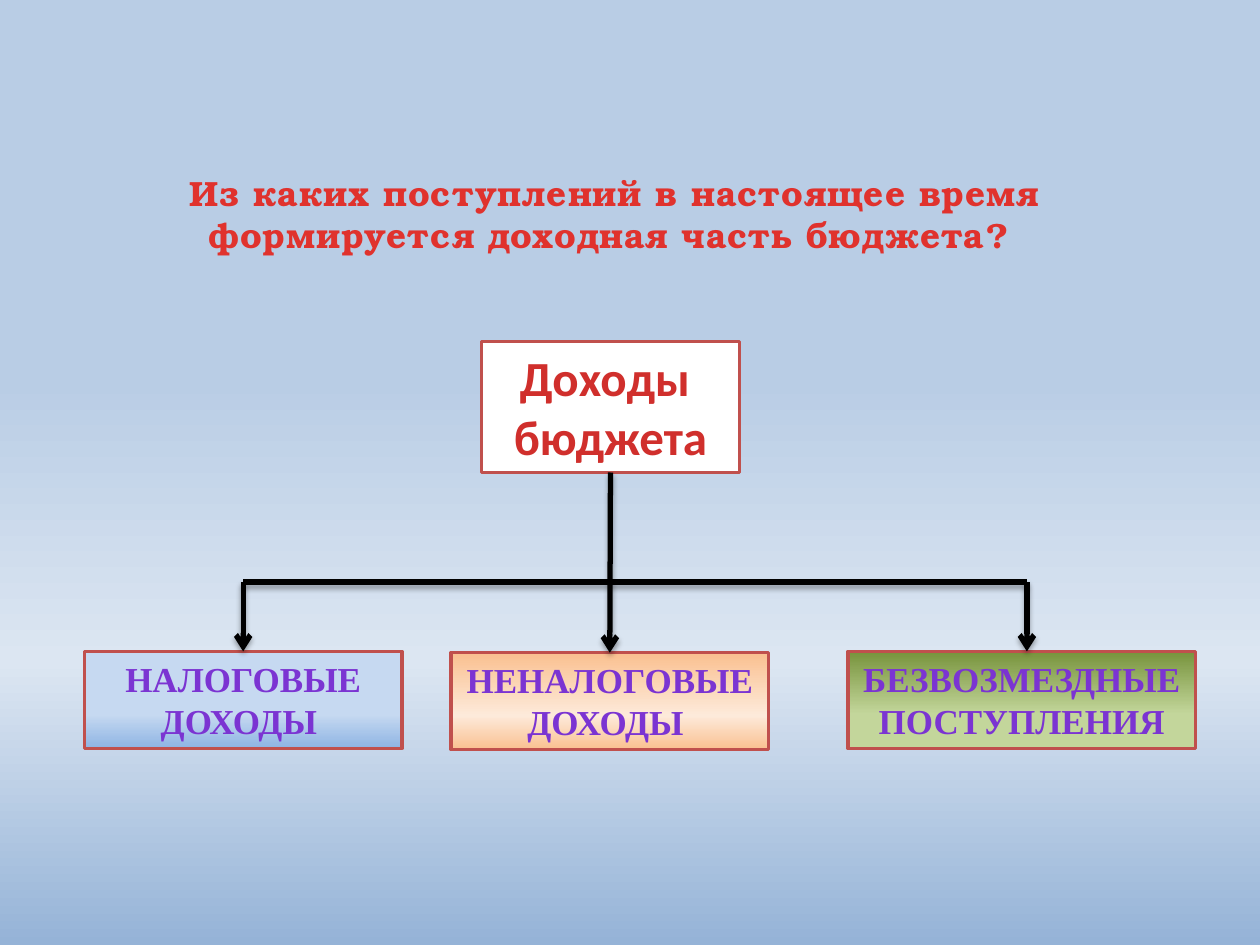
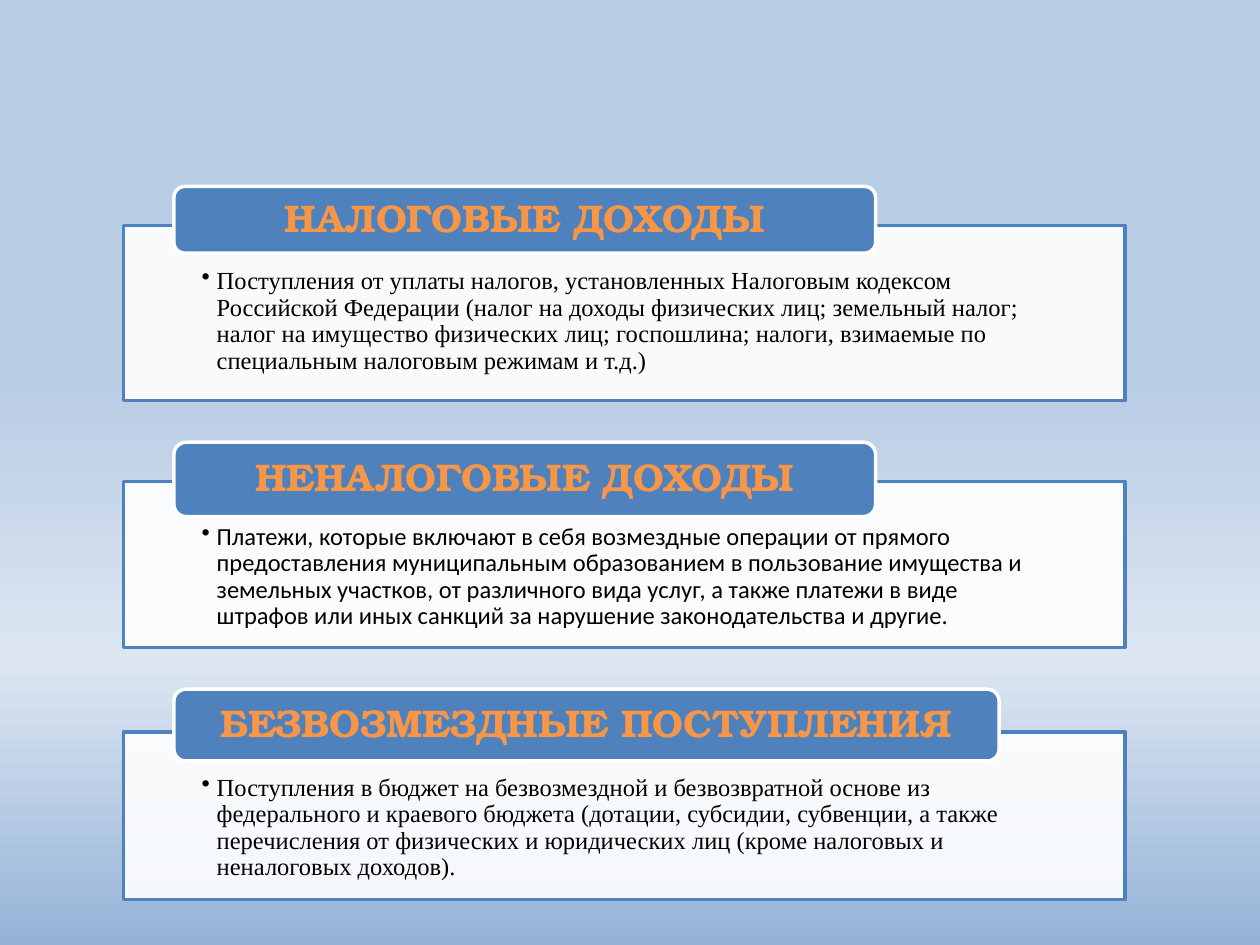
"""Build two slides on the sources of budget revenue."""
from dataclasses import dataclass
from typing import Any, NamedTuple, Optional, Union

import lxml.etree
import pptx
import pptx.dml.color
import pptx.enum.shapes
import pptx.enum.text
import pptx.oxml.ns
import pptx.util

Inches = pptx.util.Inches
Pt = pptx.util.Pt
RGBColor = pptx.dml.color.RGBColor
Shapes = pptx.enum.shapes.MSO_SHAPE
Anchor = pptx.enum.text.MSO_ANCHOR
Align = pptx.enum.text.PP_ALIGN
qualified = pptx.oxml.ns.qn

BLACK = RGBColor(0x00, 0x00, 0x00)
WHITE = RGBColor(0xFF, 0xFF, 0xFF)
BLUE = RGBColor(0x4F, 0x81, 0xBD)
ORANGE = RGBColor(0xF7, 0x96, 0x46)
BRICK = RGBColor(0xC0, 0x50, 0x4D)
SKY = RGBColor(0xB9, 0xCD, 0xE5)
MIST = RGBColor(0xDC, 0xE6, 0xF2)
DUSK = RGBColor(0x95, 0xB3, 0xD7)
RED = RGBColor(0xE0, 0x32, 0x2D)
DARK_RED = RGBColor(0xA2, 0x20, 0x1C)
PINK = RGBColor(0xFC, 0x7C, 0x7A)
CRIMSON = RGBColor(0xD0, 0x2F, 0x2C)
SCARLET = RGBColor(0xC7, 0x05, 0x00)
DEEP_VIOLET = RGBColor(0x3D, 0x1B, 0x67)
BRIGHT_VIOLET = RGBColor(0x7B, 0x34, 0xD2)
VIOLET = RGBColor(0x73, 0x30, 0xC4)
VIOLET_OUTLINE = RGBColor(0x5E, 0x45, 0x7C)
MEDIUM_BLUE = RGBColor(0x8E, 0xB4, 0xE3)
PALE_BLUE = RGBColor(0xC6, 0xD9, 0xF1)
PEACH = RGBColor(0xFA, 0xC0, 0x90)
CREAM = RGBColor(0xFD, 0xEA, 0xDA)
LIGHT_GREEN = RGBColor(0xC3, 0xD6, 0x9B)
GREEN = RGBColor(0x77, 0x93, 0x3C)

SERIF = "TeX Gyre Bonum"
ROMAN = "Times New Roman"
SANS = "Calibri"


class Gradient(NamedTuple):
    """Colour stops in percent and a counter-clockwise angle."""
    stops: tuple[tuple[int, RGBColor], ...]
    angle: int = 270


Paint = Union[RGBColor, Gradient]


class TextStyle(NamedTuple):
    """Look of the characters in a text."""
    font: str
    size: int
    paint: Paint
    bold: bool = True
    outline: Optional[RGBColor] = None
    spacing: float = 0


class Place(NamedTuple):
    """Left, top, width and height in inches."""
    left: float
    top: float
    width: float
    height: float

    def lengths(self) -> list[int]:
        """Return the four values as lengths."""
        return [Inches(value) for value in self]


@dataclass
class Source:
    """A kind of revenue in the tree."""
    text: str
    place: Place
    paint: Gradient
    arrow_x: float
    joined: bool = True


@dataclass
class Section:
    """A heading tab over a framed explanation."""
    heading: str
    text: str
    font: str
    tab: Place
    top: float
    height: float


BACKDROP = Gradient(((0, SKY), (40, SKY), (70, MIST), (100, DUSK)))
TITLE_STYLE = TextStyle(SERIF, 20, Gradient(((25, RED), (100, DARK_RED))), spacing=0.5)
ROOT_STYLE = TextStyle(SANS, 28, Gradient(((0, PINK), (75, CRIMSON), (100, SCARLET))))
SOURCE_STYLE = TextStyle(
    ROMAN, 20,
    Gradient(((0, DEEP_VIOLET), (43, BRIGHT_VIOLET), (48, VIOLET), (100, DEEP_VIOLET))),
    outline=VIOLET_OUTLINE)
HEADING_STYLE = TextStyle(SERIF, 22, ORANGE)

BRANCH_Y = 4.62
SOURCES = [
    Source("НАЛОГОВЫЕ ДОХОДЫ ", Place(0.67, 5.17, 2.52, 0.77),
           Gradient(((0, MEDIUM_BLUE), (35, PALE_BLUE), (100, PALE_BLUE)), 90), 1.93),
    Source("НЕНАЛОГОВЫЕ ДОХОДЫ ", Place(3.58, 5.18, 2.52, 0.77),
           Gradient(((0, PEACH), (35, CREAM), (100, PEACH)), 90), 4.84),
    Source("БЕЗВОЗМЕЗДНЫЕ ПОСТУПЛЕНИЯ", Place(6.73, 5.17, 2.76, 0.77),
           Gradient(((0, LIGHT_GREEN), (35, LIGHT_GREEN), (100, GREEN)), 90), 8.15, False),
]
SECTIONS = [
    Section("НАЛОГОВЫЕ ДОХОДЫ",
            "Поступления от уплаты налогов, установленных Налоговым кодексом Российской "
            "Федерации (налог на доходы физических лиц; земельный налог; налог на имущество "
            "физических лиц; госпошлина; налоги, взимаемые по специальным налоговым режимам "
            "и т.д.)",
            ROMAN, Place(1.38, 1.48, 5.57, 0.53), 1.79, 1.39),
    Section("НЕНАЛОГОВЫЕ ДОХОДЫ",
            "Платежи, которые включают в себя возмездные операции от прямого предоставления "
            "муниципальным образованием в пользование имущества и земельных участков, от "
            "различного вида услуг, а также платежи в виде штрафов или иных санкций за "
            "нарушение законодательства и другие.",
            SANS, Place(1.38, 3.51, 5.57, 0.59), 3.82, 1.32),
    Section("БЕЗВОЗМЕЗДНЫЕ ПОСТУПЛЕНИЯ",
            "Поступления в бюджет на безвозмездной и безвозвратной основе из федерального и "
            "краевого бюджета (дотации, субсидии, субвенции, а также перечисления от "
            "физических и юридических лиц (кроме налоговых и неналоговых доходов).",
            ROMAN, Place(1.38, 5.47, 6.55, 0.57), 5.81, 1.33),
]


def add_element(parent: Any, tag: str, **attributes: Any) -> Any:
    """Append a drawing element with attributes."""
    values = {name: str(value) for name, value in attributes.items()}
    return lxml.etree.SubElement(parent, qualified(tag), values)


def apply_paint(fill: Any, owner: Any, paint: Paint) -> None:
    """Fill with a plain colour or a gradient of any number of stops."""
    if isinstance(paint, RGBColor):
        fill.solid()
        fill.fore_color.rgb = paint
        return
    fill.gradient()
    fill.gradient_angle = paint.angle
    stop_list = owner.find(".//" + qualified("a:gsLst"))
    for stop in list(stop_list):
        stop_list.remove(stop)
    for percent, colour in paint.stops:
        stop = add_element(stop_list, "a:gs", pos=percent * 1000)
        add_element(stop, "a:srgbClr", val=colour)


def style_span(span: Any, style: TextStyle) -> None:
    """Apply a text style to one run."""
    span.font.name = style.font
    span.font.size = Pt(style.size)
    span.font.bold = style.bold
    properties = span._r.get_or_add_rPr()
    apply_paint(span.font.fill, properties, style.paint)
    if style.spacing:
        properties.set("spc", str(round(style.spacing * 100)))
    if style.outline is not None:
        line = add_element(properties, "a:ln", w=Pt(0.71))
        add_element(add_element(line, "a:solidFill"), "a:srgbClr", val=style.outline)
        properties.insert(0, line)


def write(shape: Any, text: str, style: TextStyle, align: Any = Align.CENTER,
          anchor: Any = Anchor.TOP) -> Any:
    """Write styled, wrapped text and return the text frame."""
    frame = shape.text_frame
    frame.text = text
    frame.word_wrap = True
    frame.vertical_anchor = anchor
    for para in frame.paragraphs:
        para.alignment = align
        for span in para.runs:
            style_span(span, style)
    return frame


def set_margins(frame: Any, side: float, top: float, bottom: float) -> None:
    """Set the text margins in inches."""
    frame.margin_left = frame.margin_right = Inches(side)
    frame.margin_top, frame.margin_bottom = Inches(top), Inches(bottom)


def add_box(page: Any, place: Place, paint: Paint, border: RGBColor,
            kind: Any = Shapes.RECTANGLE) -> Any:
    """Add a bordered shape without a shadow."""
    box = page.shapes.add_shape(kind, *place.lengths())
    box.shadow.inherit = False
    apply_paint(box.fill, box._element.spPr, paint)
    box.line.color.rgb = border
    box.line.width = Pt(2)
    return box


def add_line(page: Any, start: tuple[float, float], end: tuple[float, float],
             arrow: bool = True) -> Any:
    """Add a thick black line with a soft shadow."""
    line = page.shapes.add_connector(
        pptx.enum.shapes.MSO_CONNECTOR.STRAIGHT,
        *[Inches(value) for value in (*start, *end)])
    line.line.color.rgb = BLACK
    line.line.width = Pt(3)
    properties = line._element.spPr
    if arrow:
        add_element(properties.find(qualified("a:ln")), "a:tailEnd", type="arrow")
    shadow = add_element(add_element(properties, "a:effectLst"), "a:outerShdw",
                         blurRad=Pt(3.1), dist=Pt(1.8), dir=5400000, rotWithShape=0)
    add_element(add_element(shadow, "a:srgbClr", val=BLACK), "a:alpha", val=35000)
    return line


def add_page(deck: Any) -> Any:
    """Add a blank page with the shared backdrop."""
    page = deck.slides.add_slide(deck.slide_layouts[6])
    apply_paint(page.background.fill, page._element, BACKDROP)
    return page


def build_tree(deck: Any) -> None:
    """Build the tree of revenue sources."""
    page = add_page(deck)
    fit = pptx.enum.text.MSO_AUTO_SIZE.SHAPE_TO_FIT_TEXT
    title = page.shapes.add_textbox(*Place(0.98, 1.31, 7.8, 0.77).lengths())
    write(title, "Из каких поступлений в настоящее время формируется доходная часть бюджета? ",
          TITLE_STYLE).auto_size = fit
    root = add_box(page, Place(3.82, 2.71, 2.05, 1.04), WHITE, BRICK)
    write(root, "Доходы \nбюджета", ROOT_STYLE).auto_size = fit
    boxes = []
    for source in SOURCES:
        box = add_box(page, source.place, source.paint, BRICK)
        write(box, source.text, SOURCE_STYLE).auto_size = fit
        boxes.append(box)
    left, middle, right = SOURCES
    add_line(page, (left.arrow_x, BRANCH_Y), (right.arrow_x, BRANCH_Y), arrow=False)
    for source, box in zip(SOURCES, boxes):
        start_y = 3.75 if source is middle else BRANCH_Y
        line = add_line(page, (source.arrow_x, start_y), (source.arrow_x, source.place.top))
        if source is middle:
            line.begin_connect(root, 2)
        if source.joined:
            line.end_connect(box, 0)


def add_section(page: Any, section: Section) -> None:
    """Add a framed explanation with its heading tab."""
    panel = add_box(page, Place(0.98, section.top, 7.95, section.height), WHITE, BLUE)
    colour = panel._element.spPr.find(qualified("a:solidFill"))[0]
    add_element(colour, "a:alpha", val=90000)
    frame = write(panel, section.text, TextStyle(section.font, 14, BLACK, False), Align.LEFT)
    set_margins(frame, 0.62, 0.34, 0.11)
    para = frame.paragraphs[0]
    para.level = 1
    para.line_spacing = 0.9
    properties = para._p.get_or_add_pPr()
    properties.set("marL", str(Inches(0.12)))
    properties.set("indent", str(-Inches(0.12)))
    add_element(properties, "a:buChar", char="•")
    tab = add_box(page, section.tab, BLUE, WHITE, Shapes.ROUNDED_RECTANGLE)
    frame = write(tab, section.heading, HEADING_STYLE, anchor=Anchor.MIDDLE)
    set_margins(frame, 0.21, 0, 0)
    frame.paragraphs[0].line_spacing = 0.9


def main() -> None:
    """Build and save the deck."""
    deck = pptx.Presentation()
    deck.slide_width, deck.slide_height = Inches(10), Inches(7.5)
    build_tree(deck)
    page = add_page(deck)
    for section in SECTIONS:
        add_section(page, section)
    deck.save("out.pptx")


if __name__ == "__main__":
    main()
